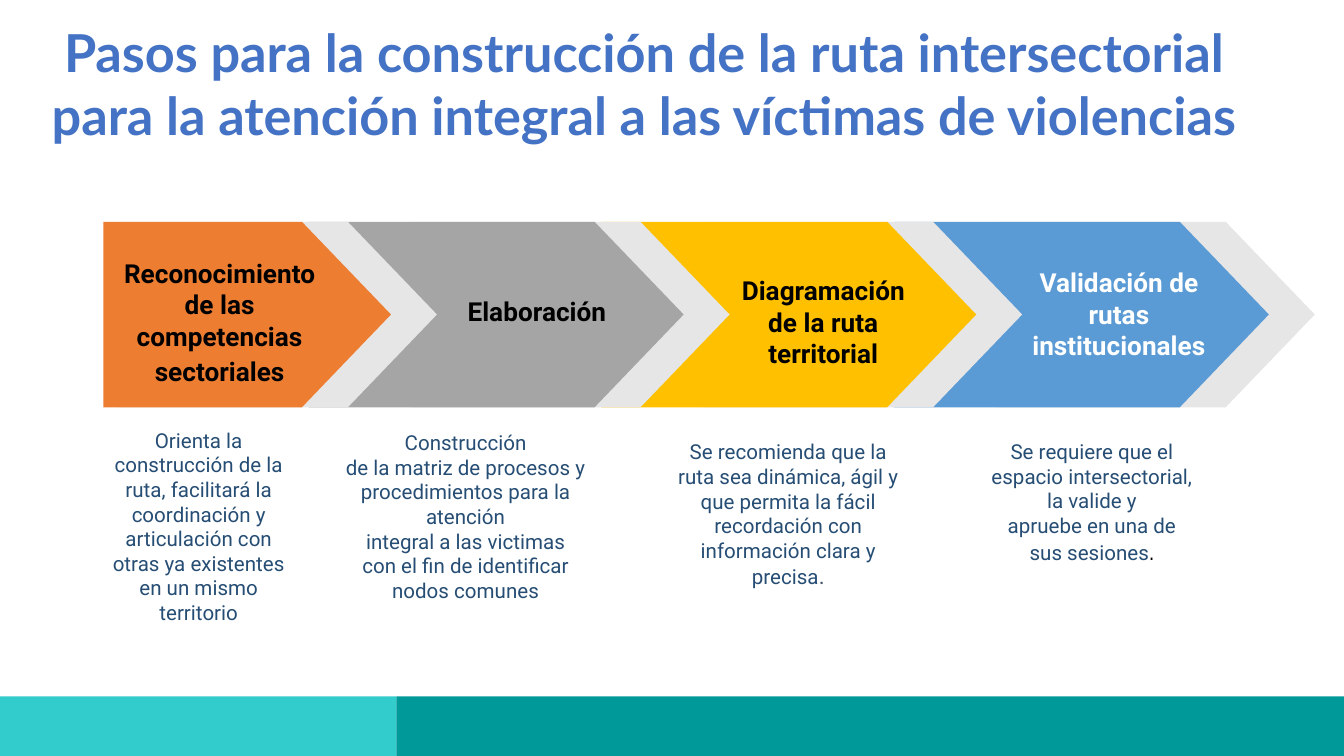
from dataclasses import dataclass
from typing import Optional

from pptx import Presentation
from pptx.dml.color import RGBColor
from pptx.enum import shapes, text
from pptx.util import Pt


@dataclass(frozen=True)
class Theme:
    title: str = "4472C4"
    dark: str = "000000"
    light: str = "FFFFFF"
    body: str = "264D74"
    slate: str = "44546A"
    gap: str = "E7E6E6"
    aqua: str = "33CCCC"
    teal: str = "009999"
    head: str = "Lato"
    font: str = "Roboto"
    thin: str = "Arial Narrow"
    big: int = 28
    mid: int = 14
    small: int = 11
    dot: int = 12


@dataclass(frozen=True)
class Box:
    x: float
    y: float
    w: float
    h: float


@dataclass(frozen=True)
class Style:
    font: str
    size: int
    color: str
    bold: bool = False
    after: float = 0


@dataclass(frozen=True)
class Step:
    fill: str
    label: list[str]
    spot: Box
    ink: str
    lines: list[str]
    area: Box
    dot: Optional[Style] = None
    top: bool = False


T = Theme()
BODY = Style(T.font, T.small, T.body)

# Arrow row: every tip is one pitch after the last
ROW_Y, ROW_H = 118.8, 99.4
TIP, PITCH = 209.5, 156.75
FIRST_W, STEP_W = 154.1, 200.9
GAP_W, GAP_OUT = 170.6, 24.6
POINT = 0.48

STEPS = [
    Step("ED7D31", ["Reconocimiento de las competencias", "sectoriales"],
         Box(57.6, 157.7, 120.2, 29.5), T.dark,
         ["Orienta la", "construcción de la ruta, facilitará la",
          "coordinación y articulación con otras ya existentes en un mismo territorio"],
         Box(51.8, 255.6, 109.4, 52.6)),
    Step("A5A5A5", ["Elaboración"], Box(230.4, 151.9, 114.5, 29.5), T.dark,
         ["Construcción", "de la matriz de procesos y",
          "procedimientos para la atención", "integral a las victimas",
          "con el fin de identificar", "nodos comunes"],
         Box(177.1, 244.8, 144.7, 63.4)),
    Step("FFC000", ["Diagramación de la ruta territorial"],
         Box(383.8, 157.7, 114.5, 29.5), T.dark,
         ["Se recomienda que la ruta sea dinámica, ágil y que permita la fácil "
          "recordación con información clara y precisa"],
         Box(355.7, 231.8, 133.2, 88.6),
         Style(T.font, T.dot, T.slate), top=True),
    Step("5B9BD5", ["Validación de rutas institucionales"],
         Box(542.2, 153.4, 114.5, 29.5), T.light,
         ["Se requiere que el", "espacio intersectorial, la valide y",
          "apruebe en una de sus sesiones"],
         Box(522.7, 242.6, 124.6, 52.6),
         Style(T.thin, T.dot, T.dark)),
]


def paint(run, style: Style) -> None:
    font = run.font
    font.name, font.size, font.bold = style.font, Pt(style.size), style.bold
    font.color.rgb = RGBColor.from_string(style.color)


def block(page, kind, box: Box, fill: str):
    form = page.shapes.add_shape(kind, Pt(box.x), Pt(box.y), Pt(box.w), Pt(box.h))
    form.shadow.inherit = False
    form.fill.solid()
    form.fill.fore_color.rgb = RGBColor.from_string(fill)
    form.line.fill.background()
    return form


def arrow(page, tip: float, width: float, fill: str) -> None:
    box = Box(tip - width, ROW_Y, width, ROW_H)
    form = block(page, shapes.MSO_SHAPE.PENTAGON, box, fill)
    form.adjustments[0] = POINT


def write(page, box: Box, lines: list[str], style: Style,
          top: bool = False, pad: float = 7.2):
    frame = page.shapes.add_textbox(
        Pt(box.x), Pt(box.y), Pt(box.w), Pt(box.h)).text_frame
    frame.word_wrap = True
    frame.vertical_anchor = text.MSO_ANCHOR.TOP if top else text.MSO_ANCHOR.MIDDLE
    frame.margin_top = frame.margin_bottom = Pt(pad)
    frame.margin_left = frame.margin_right = Pt(7.2)
    frame.text = "\n".join(lines)
    for para in frame.paragraphs:
        para.alignment = text.PP_ALIGN.CENTER
        para.space_after = Pt(style.after)
        for run in para.runs:
            paint(run, style)
    return frame


def detail(page, step: Step) -> None:
    pad = 3.6 if step.top else 7.2
    frame = write(page, step.area, step.lines, BODY, step.top, pad)
    if step.dot:
        run = frame.paragraphs[-1].add_run()
        run.text = "."
        paint(run, step.dot)


def main() -> None:
    deck = Presentation()
    deck.slide_width, deck.slide_height = Pt(720), Pt(405)
    page = deck.slides.add_slide(deck.slide_layouts[6])

    # Arrows, last one at the back
    for i, step in reversed(list(enumerate(STEPS))):
        tip = TIP + i * PITCH
        arrow(page, tip + GAP_OUT, GAP_W, T.gap)
        arrow(page, tip, STEP_W if i else FIRST_W, step.fill)

    # Step labels and details
    for step in STEPS:
        write(page, step.spot, step.label,
              Style(T.font, T.mid, step.ink, bold=True, after=2))
        detail(page, step)

    # Title
    write(page, Box(20.2, 3.6, 649.4, 37.4),
          ["Pasos para la construcción de la ruta intersectorial "
           "para la atención integral a las víctimas de violencias"],
          Style(T.head, T.big, T.title, bold=True), top=True)

    # Footer band
    rect = shapes.MSO_SHAPE.RECTANGLE
    block(page, rect, Box(0, 373, 212.4, 32), T.aqua)
    block(page, rect, Box(212.4, 373, 507.6, 32), T.teal)

    deck.save("out.pptx")


if __name__ == "__main__":
    main()
